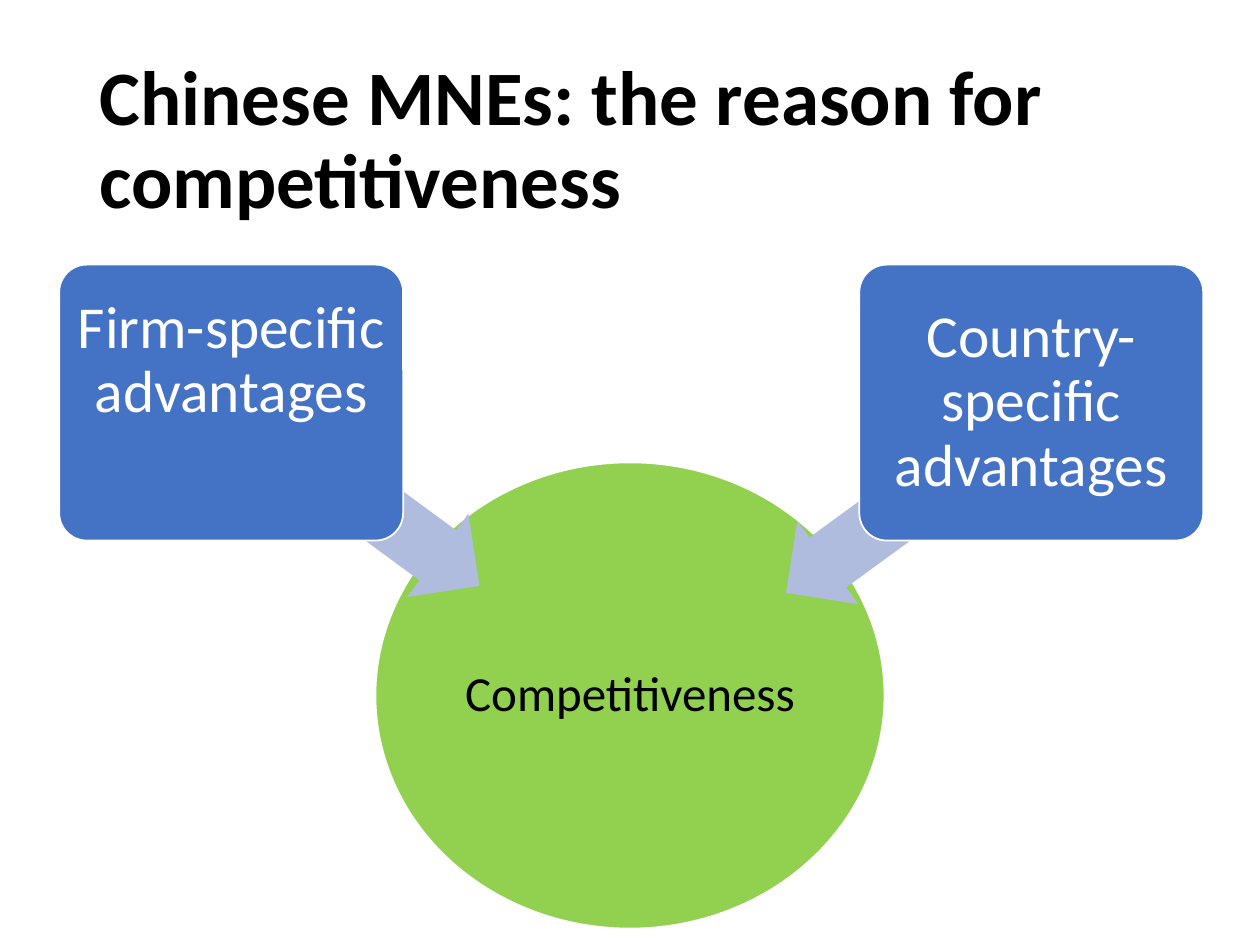
from pptx import Presentation
from pptx.dml.color import RGBColor
from pptx.enum.shapes import MSO_SHAPE
from pptx.enum.text import MSO_ANCHOR, PP_ALIGN
from pptx.util import Inches, Pt

BLACK = RGBColor(0x00, 0x00, 0x00)
WHITE = RGBColor(0xFF, 0xFF, 0xFF)
GREEN = RGBColor(0x92, 0xD0, 0x50)
BLUE = RGBColor(0x44, 0x72, 0xC4)
PALE = RGBColor(0xB0, 0xBC, 0xDE)


def write(shape, text, size, color, bold=False, align=PP_ALIGN.CENTER,
          inset=0.07, lift=0):
    frame = shape.text_frame
    frame.word_wrap = True
    frame.vertical_anchor = MSO_ANCHOR.MIDDLE
    frame.margin_left = frame.margin_right = frame.margin_top = Inches(inset)
    frame.margin_bottom = Inches(inset + lift)
    para = frame.paragraphs[0]
    para.alignment = align
    para.line_spacing = 0.9
    run = para.add_run()
    run.text = text
    font = run.font
    font.name = "Calibri"
    font.size = Pt(size)
    font.bold = bold
    font.color.rgb = color


def draw(slide, kind, box, fill, edge=None):
    shape = slide.shapes.add_shape(kind, *map(Inches, box))
    shape.shadow.inherit = False
    shape.fill.solid()
    shape.fill.fore_color.rgb = fill
    if edge is None:
        shape.line.fill.background()
    else:
        shape.line.color.rgb = edge
        shape.line.width = Pt(1)
    return shape


def add_title(slide, box, text):
    title = slide.shapes.title
    title.left, title.top, title.width, title.height = map(Inches, box)
    write(title, text, 44, BLACK, bold=True, align=PP_ALIGN.LEFT, inset=0.1)


def add_goal(slide, box, text):
    goal = draw(slide, MSO_SHAPE.OVAL, box, GREEN, WHITE)
    write(goal, text, 28, BLACK, inset=0.02)


def add_arrow(slide, box, angle):
    arrow = draw(slide, MSO_SHAPE.LEFT_ARROW, box, PALE)
    arrow.adjustments[0] = 0.6
    arrow.adjustments[1] = 0.5
    arrow.rotation = angle


def add_card(slide, box, text, lift=0):
    card = draw(slide, MSO_SHAPE.ROUNDED_RECTANGLE, box, BLUE, WHITE)
    card.adjustments[0] = 0.1
    write(card, text, 34, WHITE, lift=lift)


def main():
    deck = Presentation()
    deck.slide_width, deck.slide_height = Inches(10), Inches(7.5)
    slide = deck.slides.add_slide(deck.slide_layouts[5])
    add_title(slide, (0.69, 0.4, 8.62, 1.45),
              "Chinese MNEs: the reason for competitiveness")
    add_goal(slide, (2.98, 3.67, 4.04, 3.7), "Сompetitiveness")
    causes = [
        ("Firm-specific advantages", 0.47, 0.66, (1.06, 3.34, 3.04, 0.82), 216.3),
        ("Country-specific advantages", 6.82, 0, (5.98, 3.5, 2.7, 0.82), 323.9),
    ]
    for text, left, lift, arrow, angle in causes:
        add_arrow(slide, arrow, angle)
        add_card(slide, (left, 2.1, 2.73, 2.19), text, lift)
    deck.save("out.pptx")


if __name__ == "__main__":
    main()
